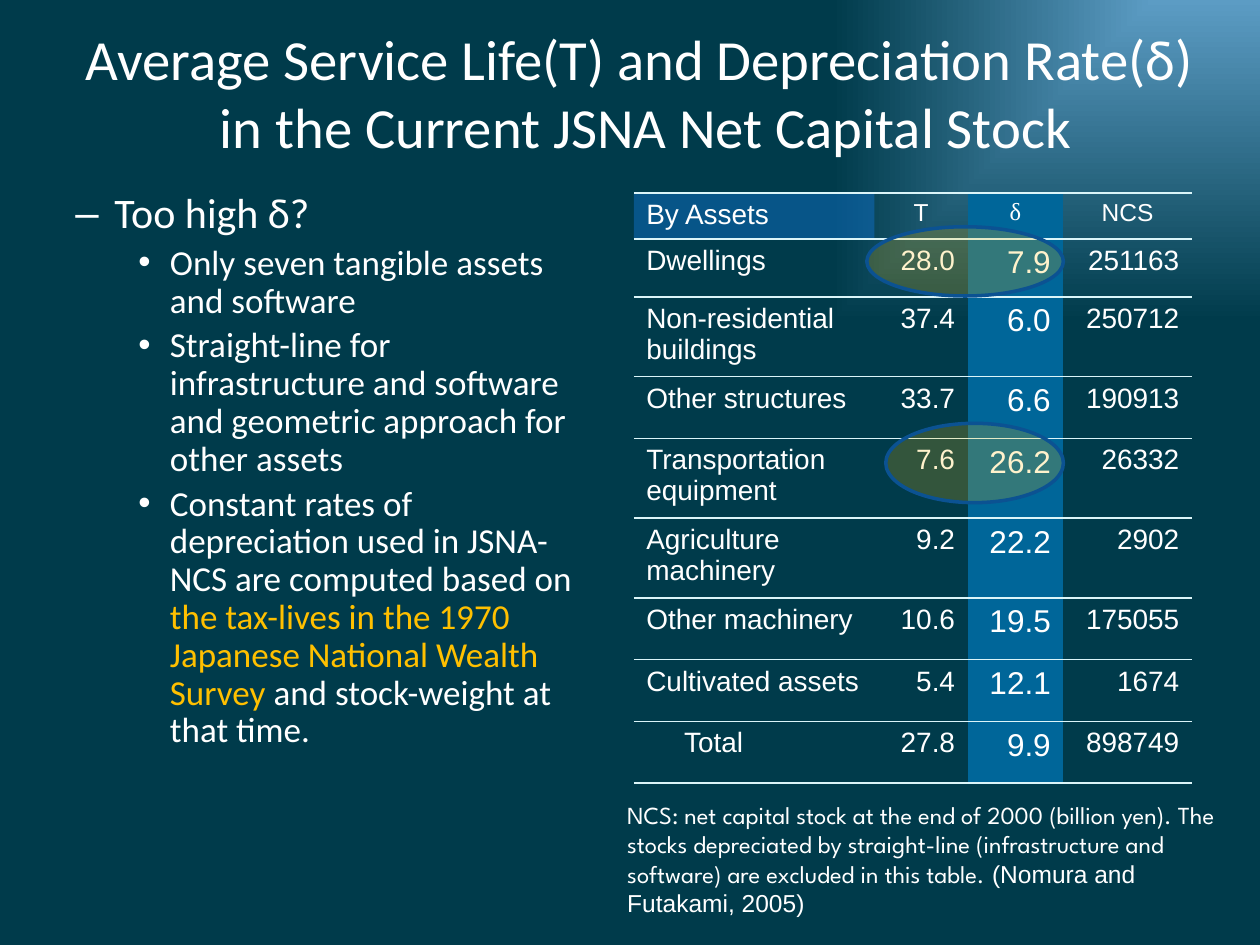
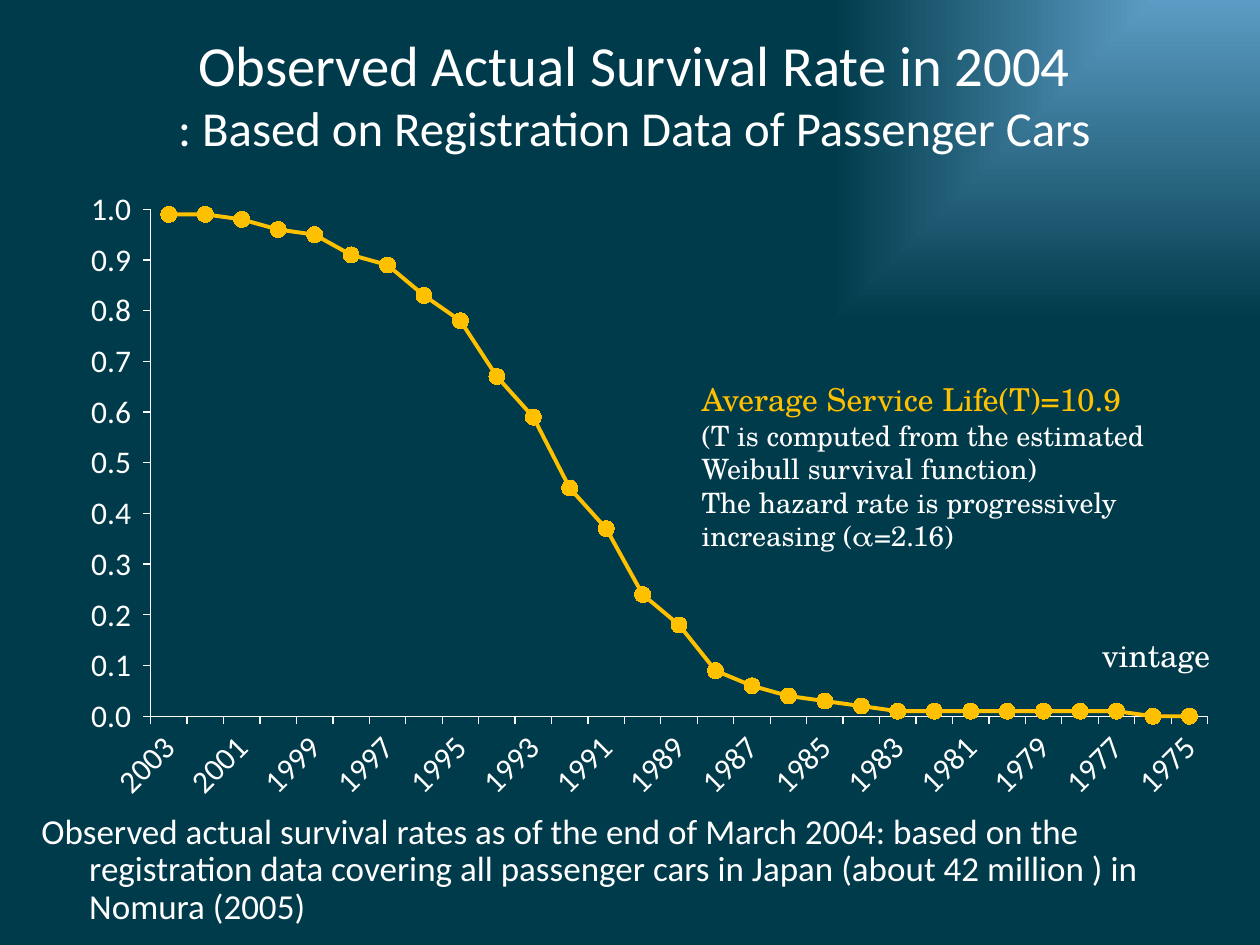
import pptx
import pptx.chart.data
import pptx.dml.color
import pptx.enum.chart
import pptx.enum.shapes
import pptx.enum.text
import pptx.oxml
import pptx.oxml.ns
import pptx.util
from dataclasses import dataclass
from typing import NamedTuple, Optional

# Shared look
WIDTH, HEIGHT = pptx.util.Inches(10), pptx.util.Inches(7.5)
WHITE, GOLD, NAVY, GLOW = "FFFFFF", "FFC000", "003B4B", "5C9CC4"
HEADER_BLUE, COLUMN_BLUE, RING_BLUE, RULE = "0F6FC6", "006699", "0B5292", "DBF5F9"
SANS, PLAIN, SERIF = "Calibri", "Arial", "TeX Gyre Schola"
TITLE_SIZE = 32.4
NO_TABLE_STYLE = "{2D5ABB26-0587-4C30-8999-92F81FD0307C}"
DRAWING = 'xmlns:a="http://schemas.openxmlformats.org/drawingml/2006/main"'
CHARTING = 'xmlns:c="http://schemas.openxmlformats.org/drawingml/2006/chart"'
ALIGN = pptx.enum.text.PP_ALIGN
ANCHOR = pptx.enum.text.MSO_ANCHOR


class Area(NamedTuple):
    """A place on the slide, in percent of its width and height."""
    left: float
    top: float
    width: float
    height: float

    def lengths(self) -> tuple:
        sides = (WIDTH, HEIGHT, WIDTH, HEIGHT)
        return tuple(pptx.util.Emu(round(side * share / 100))
                     for side, share in zip(sides, self))


class Span(NamedTuple):
    text: str
    color: Optional[str] = None
    size: Optional[float] = None
    font: Optional[str] = None
    new_line: bool = False


@dataclass
class Para:
    spans: list
    size: float
    font: str = SANS
    color: str = WHITE
    align: ALIGN = ALIGN.LEFT
    spacing: float = 1.0
    before: float = 0
    margin: float = 0       # percent of the slide's width
    hanging: float = 0
    bullet: str = ""


def rgb(color: str) -> pptx.dml.color.RGBColor:
    return pptx.dml.color.RGBColor.from_string(color)


def paint(fill, color: str, opacity: int = 100) -> None:
    fill.solid()
    fill.fore_color.rgb = rgb(color)
    if opacity < 100:
        tone = fill._xPr.find(".//" + pptx.oxml.ns.qn("a:srgbClr"))
        tone.append(pptx.oxml.parse_xml(f'<a:alpha {DRAWING} val="{opacity * 1000}"/>'))


def set_font(font, name=None, size=None, color=None) -> None:
    if name:
        font.name = name
    if size:
        font.size = pptx.util.Pt(size)
    if color:
        font.color.rgb = rgb(color)


def write(frame, paras: list) -> None:
    for index, item in enumerate(paras):
        para = frame.paragraphs[0] if index == 0 else frame.add_paragraph()
        para.alignment = item.align
        para.line_spacing = item.spacing
        para.space_before = pptx.util.Pt(item.before)
        properties = para._p.get_or_add_pPr()
        if item.margin:
            properties.set("marL", str(round(WIDTH * item.margin / 100)))
            properties.set("indent", str(round(-WIDTH * item.hanging / 100)))
        if item.bullet:
            properties.append(pptx.oxml.parse_xml(f'<a:buFont {DRAWING} typeface="Arial"/>'))
            properties.append(pptx.oxml.parse_xml(
                f'<a:buChar {DRAWING} char="{item.bullet}"/>'))

        # Fonts the runs share go on the paragraph, the others on each run
        shared = {}
        for key, default, values in (
                ("name", item.font, [span.font for span in item.spans]),
                ("size", item.size, [span.size for span in item.spans]),
                ("color", item.color, [span.color for span in item.spans])):
            if not any(values):
                shared[key] = default
        set_font(para.font, **shared)
        for span in item.spans:
            if span.new_line:
                para.add_line_break()
            run = para.add_run()
            run.text = span.text
            own = {"name": span.font or item.font, "size": span.size or item.size,
                   "color": span.color or item.color}
            set_font(run.font, **{key: own[key] for key in own if key not in shared})


def add_text(page, area: Area, paras: list, anchor=ANCHOR.TOP) -> None:
    frame = page.shapes.add_textbox(*area.lengths()).text_frame
    frame.word_wrap = True
    frame.vertical_anchor = anchor
    write(frame, paras)


def add_page(deck, title_area: Area, title: list):
    """A blank page with the corner glow and a centred title."""
    page = deck.slides.add_slide(deck.slide_layouts[6])
    page.background.fill.solid()
    solid = page._element.find(".//" + pptx.oxml.ns.qn("a:solidFill"))
    solid.getparent().replace(solid, pptx.oxml.parse_xml(
        f'<a:gradFill {DRAWING} rotWithShape="1"><a:gsLst>'
        f'<a:gs pos="0"><a:srgbClr val="{GLOW}"/></a:gs>'
        f'<a:gs pos="68000"><a:srgbClr val="{NAVY}"/></a:gs></a:gsLst>'
        '<a:path path="rect"><a:fillToRect l="100000" b="100000"/></a:path></a:gradFill>'))
    add_text(page, title_area, [Para(title, TITLE_SIZE, align=ALIGN.CENTER)], ANCHOR.MIDDLE)
    return page


# Asset table
COLUMN_SHARES = (19.1, 7.4, 7.6, 10.2)
HEADER_ROW, FIRST_ROW, ONE_LINE, TWO_LINES = 4.67, 6.13, 6.53, 7.93
DELTA_COLUMN = 2
ASSETS = (
    ("By Assets", "T", "δ", "NCS", HEADER_ROW),
    ("Dwellings", "28.0", "7.9", "251163", FIRST_ROW),
    ("Non-residential buildings", "37.4", "6.0", "250712", TWO_LINES),
    ("Other structures", "33.7", "6.6", "190913", ONE_LINE),
    ("Transportation equipment", "7.6", "26.2", "26332", TWO_LINES),
    ("Agriculture machinery", "9.2", "22.2", "2902", TWO_LINES),
    ("Other machinery", "10.6", "19.5", "175055", ONE_LINE),
    ("Cultivated assets", "5.4", "12.1", "1674", ONE_LINE),
    ("Total", "27.8", "9.9", "898749", ONE_LINE),
)


def add_rules(cell) -> None:
    properties = cell._tc.get_or_add_tcPr()
    for index, side in enumerate(("lnT", "lnB")):
        properties.insert(index, pptx.oxml.parse_xml(
            f'<a:{side} {DRAWING} w="12700"><a:solidFill><a:srgbClr val="{RULE}"/>'
            f'</a:solidFill></a:{side}>'))


def cell_para(text: str, row: int, column: int) -> Para:
    if column == 0:
        return Para([Span(text)], 16, PLAIN)
    if row == 0:
        font = "Times New Roman" if column == DELTA_COLUMN else PLAIN
        return Para([Span(text)], 14, font, align=ALIGN.CENTER)
    return Para([Span(text)], 18 if column == DELTA_COLUMN else 16, PLAIN, align=ALIGN.RIGHT)


def add_asset_table(page) -> None:
    area = Area(50.3, 20.4, sum(COLUMN_SHARES), sum(asset[-1] for asset in ASSETS))
    table = page.shapes.add_table(len(ASSETS), len(COLUMN_SHARES), *area.lengths()).table
    table.first_row = table.horz_banding = False
    table._tbl.tblPr.find(pptx.oxml.ns.qn("a:tableStyleId")).text = NO_TABLE_STYLE
    for column, share in zip(table.columns, COLUMN_SHARES):
        column.width = round(WIDTH * share / 100)
    for row, (*texts, share) in enumerate(ASSETS):
        table.rows[row].height = round(HEIGHT * share / 100)
        for column, text in enumerate(texts):
            cell = table.cell(row, column)
            if column == DELTA_COLUMN:
                paint(cell.fill, COLUMN_BLUE)
            elif row == column == 0:
                paint(cell.fill, HEADER_BLUE, 50)
            else:
                cell.fill.background()
            add_rules(cell)
            write(cell.text_frame, [cell_para(text, row, column)])
    table.cell(len(ASSETS) - 1, 0).margin_left = round(WIDTH * 0.04)


def add_ring(page, area: Area) -> None:
    ring = page.shapes.add_shape(pptx.enum.shapes.MSO_SHAPE.OVAL, *area.lengths())
    ring.shadow.inherit = False
    paint(ring.fill, GOLD, 20)
    ring.line.color.rgb = rgb(RING_BLUE)
    ring.line.width = pptx.util.Pt(2)


def build_service_life(deck) -> None:
    page = add_page(deck, Area(2.5, 3.07, 97.5, 13.33), [
        Span("Average Service Life(T) and Depreciation Rate(δ) "),
        Span("in the Current JSNA Net Capital Stock", new_line=True)])
    points = (
        [Span("Only seven tangible assets and software")],
        [Span("Straight-line for infrastructure and software and geometric approach "
              "for other assets")],
        [Span("Constant rates of depreciation used in JSNA-NCS are computed based on "),
         Span("the tax-lives in the 1970 Japanese National Wealth Survey ", GOLD),
         Span("and stock-weight at that time.")])
    question = Para([Span("Too high δ?")], 24, spacing=0.9,
                    margin=8.1, hanging=3.1, bullet="–")
    add_text(page, Area(0, 19.73, 46.9, 74.13), [question] + [
        Para(point, 20, spacing=0.9, before=4, margin=12.5, hanging=2.5, bullet="•")
        for point in points])
    add_asset_table(page)
    add_text(page, Area(48.8, 84, 49.6, 13.87), [Para([
        Span("NCS: net capital stock at the end of 2000 (billion yen). The stocks depreciated "
             "by straight-line (infrastructure and software) are excluded in this table.",
             font="League Spartan"),
        Span(" (Nomura and Futakami, 2005)")], 14, PLAIN)])
    for area in (Area(68.8, 24, 15.6, 7.33), Area(70.3, 44.8, 14.1, 8.4)):
        add_ring(page, area)


# Survival chart, newest vintage first
VINTAGES = [str(year) for year in range(2003, 1974, -1)]
SURVIVAL = (0.99, 0.99, 0.98, 0.96, 0.95, 0.91, 0.89, 0.83, 0.78, 0.67, 0.59, 0.45, 0.37,
            0.24, 0.18, 0.09, 0.06, 0.04, 0.03, 0.02, *[0.01] * 7, 0, 0)
PLOT_SHARES = {"x": 0.07, "y": 0.05, "w": 0.91, "h": 0.8}


def add_survival_chart(page) -> None:
    data = pptx.chart.data.CategoryChartData(number_format="0.00")
    data.categories = VINTAGES
    data.add_series("Series 1", SURVIVAL)
    chart = page.shapes.add_chart(pptx.enum.chart.XL_CHART_TYPE.LINE_MARKERS,
                                  *Area(5.5, 18.8, 92.2, 67.07).lengths(), data).chart
    chart.has_legend = chart.has_title = False
    set_font(chart.font, SANS, 18, WHITE)

    line = chart.plots[0].series[0]
    line.smooth = False
    chart.plots[0].vary_by_categories = False
    line.format.line.color.rgb = rgb(GOLD)
    line.format.line.width = pptx.util.Pt(2.25)
    line.marker.style = pptx.enum.chart.XL_MARKER_STYLE.CIRCLE
    line.marker.size = 9
    paint(line.marker.format.fill, GOLD)
    line.marker.format.line.color.rgb = rgb(GOLD)

    rates, years = chart.value_axis, chart.category_axis
    for axis in (rates, years):
        axis.has_major_gridlines = False
        axis.major_tick_mark = pptx.enum.chart.XL_TICK_MARK.OUTSIDE
        axis.format.line.color.rgb = rgb(WHITE)
        axis.format.line.width = pptx.util.Pt(0.75)
        set_font(axis.tick_labels.font, SANS, 18, WHITE)
    rates.minimum_scale, rates.maximum_scale, rates.major_unit = 0, 1, 0.1
    rates.tick_labels.number_format = r"#,##0.0_);[Red]\(#,##0.0\)"
    rates.tick_labels.number_format_is_linked = False

    # Slanted label on every second year, plot area in a fixed place
    years._element.find(".//" + pptx.oxml.ns.qn("a:bodyPr")).set("rot", "-2700000")
    years._element.find(pptx.oxml.ns.qn("c:noMultiLvlLbl")).addprevious(
        pptx.oxml.parse_xml(f'<c:tickLblSkip {CHARTING} val="2"/>'))
    plot_area = chart._chartSpace.chart.plotArea
    for old in plot_area.findall(pptx.oxml.ns.qn("c:layout")):
        plot_area.remove(old)
    modes = "".join(f'<c:{side}Mode val="edge"/>' for side in "xy")
    shares = "".join(f'<c:{side} val="{share}"/>' for side, share in PLOT_SHARES.items())
    plot_area.insert(0, pptx.oxml.parse_xml(
        f'<c:layout {CHARTING}><c:manualLayout><c:layoutTarget val="inner"/>'
        f'{modes}{shares}</c:manualLayout></c:layout>'))


def build_survival(deck) -> None:
    page = add_page(deck, Area(1.6, 3.07, 97.5, 13.6), [
        Span("Observed Actual Survival Rate in 2004"),
        Span(": Based on Registration Data of Passenger Cars", size=27.9, new_line=True)])
    add_survival_chart(page)
    add_text(page, Area(2.3, 85.47, 94.2, 11.47), [Para([Span(
        "Observed actual survival rates as of the end of March 2004: based on the registration "
        "data covering all passenger cars in Japan (about 42 million ) in Nomura (2005)")],
        20, spacing=0.9, margin=3.8, hanging=3.8)])
    add_text(page, Area(85.9, 66.67, 11.7, 5.33),
             [Para([Span("vintage")], 18, SERIF, align=ALIGN.CENTER)])
    add_text(page, Area(54.7, 39.6, 40.6, 19.73), [
        Para([Span("Average Service Life(T)=10.9")], 18, SERIF, GOLD),
        Para([Span("(T is computed from the estimated Weibull survival function)")], 16, SERIF),
        Para([Span("The hazard rate is progressively increasing (α=2.16)")], 16, SERIF)])


def main() -> None:
    deck = pptx.Presentation()
    deck.slide_width, deck.slide_height = WIDTH, HEIGHT
    build_service_life(deck)
    build_survival(deck)
    deck.save("out.pptx")


if __name__ == "__main__":
    main()
